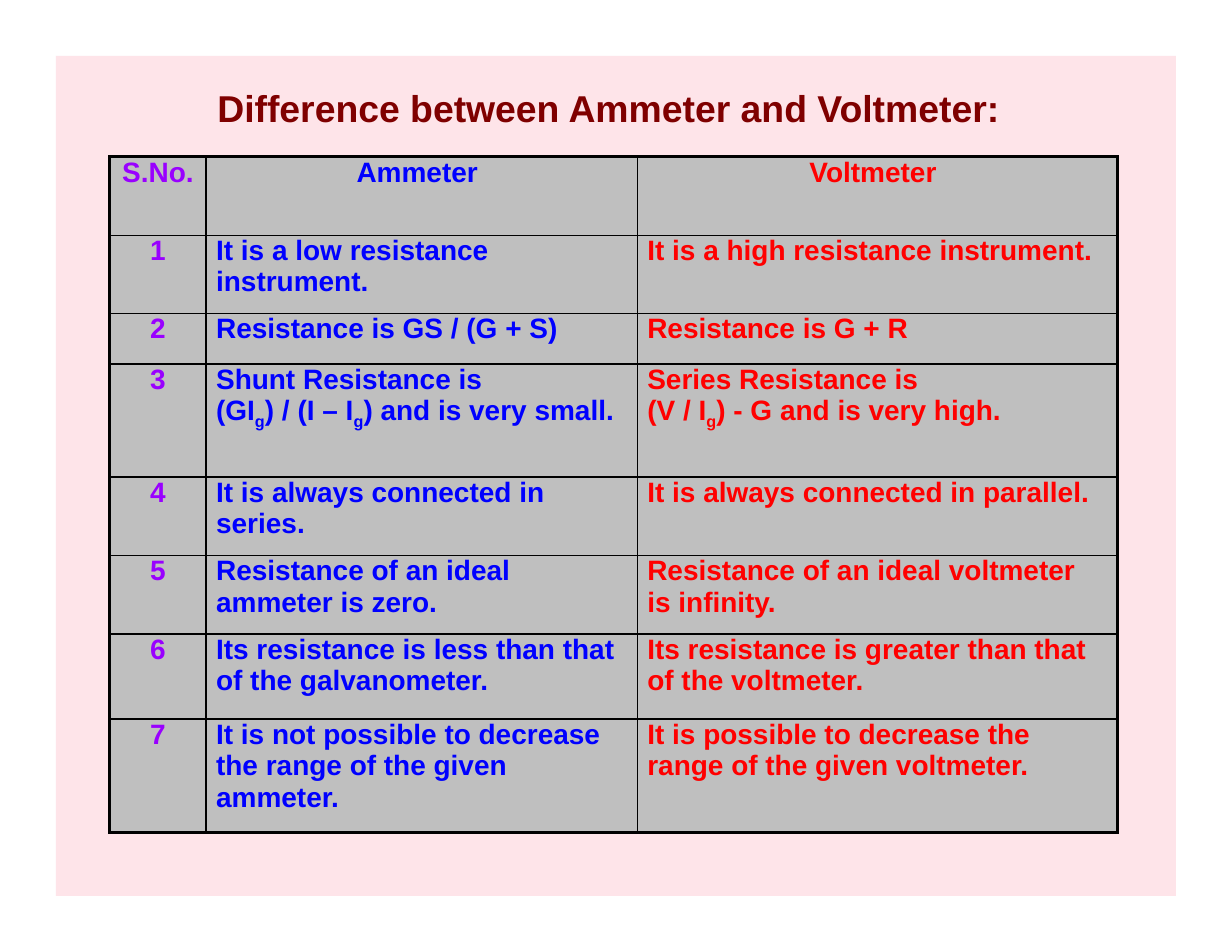
from dataclasses import dataclass

from lxml import etree
from pptx import Presentation
from pptx.dml.color import RGBColor
from pptx.enum.shapes import MSO_SHAPE
from pptx.enum.text import MSO_ANCHOR, PP_ALIGN
from pptx.oxml.ns import qn
from pptx.util import Inches, Pt

LEFT, MID = PP_ALIGN.LEFT, PP_ALIGN.CENTER
TOP = MSO_ANCHOR.TOP
RECT = MSO_SHAPE.RECTANGLE
HUES = {
    "panel": "FEE4E9", "title": "7F0000", "cell": "BFBFBF", "line": "000000",
    "num": "9900FF", "amp": "0000FF", "volt": "FF0000",
}
THIN, THICK = 1, 2.25


@dataclass
class Column:
    """A table column with its look."""
    head: str
    width: float
    hue: str
    align: int
    left: float
    right: float


@dataclass
class Row:
    """One point of difference; an underscore lowers the next letter."""
    amp: str
    volt: str
    height: float


COLS = [
    Column("S.No.", 0.86, "num", MID, 0, 0),
    Column("Ammeter", 3.85, "amp", LEFT, 0.09, 0.17),
    Column("Voltmeter", 4.29, "volt", LEFT, 0.09, 0.17),
]
HEAD = 0.7
ROWS = [
    Row("It is a low resistance instrument.",
        "It is a high resistance instrument.", 0.7),
    Row("Resistance is GS / (G + S)", "Resistance is G + R", 0.45),
    Row("Shunt Resistance is\n(GI_g) / (I – I_g) and is very small.",
        "Series Resistance is\n(V / I_g) - G and is very high.", 1.01),
    Row("It is always connected in series.",
        "It is always connected in parallel.", 0.7),
    Row("Resistance of an ideal ammeter is zero.",
        "Resistance of an ideal voltmeter is infinity.", 0.7),
    Row("Its resistance is less than that of the galvanometer.",
        "Its resistance is greater than that of the voltmeter.", 0.76),
    Row("It is not possible to decrease the range of the given ammeter.",
        "It is possible to decrease the range of the given voltmeter.", 1.01),
]


def color(key: str) -> RGBColor:
    """Look up a colour by its role."""
    return RGBColor.from_string(HUES[key])


def write(frame, text: str, *, hue: str, size: float = 18, align=LEFT) -> None:
    """Fill a text frame with bold lines, lowering marked letters."""
    for i, line in enumerate(text.split("\n")):
        para = frame.add_paragraph() if i else frame.paragraphs[0]
        para.alignment = align
        first, *rest = line.split("_")
        parts = [(first, False)]
        for part in rest:
            parts += [(part[0], True), (part[1:], False)]
        for words, low in parts:
            run = para.add_run()
            run.text = words
            run.font.name, run.font.size, run.font.bold = "Arial", Pt(size), True
            run.font.color.rgb = color(hue)
            if low:
                run.font._element.set("baseline", "-23000")


def border(cell, sides: dict[str, float]) -> None:
    """Draw the cell edges, given as side and width."""
    props = cell._tc.get_or_add_tcPr()
    for i, (side, width) in enumerate(sides.items()):
        edge = etree.Element(qn(f"a:ln{side}"), w=str(Pt(width)))
        fill = etree.SubElement(edge, qn("a:solidFill"))
        etree.SubElement(fill, qn("a:srgbClr"), val=HUES["line"])
        props.insert(i, edge)


def panel(slide) -> None:
    """Lay the pink panel behind the title."""
    shape = slide.shapes.add_shape(
        RECT, Inches(0.5), Inches(0.5), Inches(10), Inches(7.5))
    shape.shadow.inherit = False
    shape.fill.solid()
    shape.fill.fore_color.rgb = color("panel")
    shape.line.fill.background()
    slide.shapes.title.element.addprevious(shape.element)


def heading(slide, text: str) -> None:
    """Place and fill the title."""
    title = slide.shapes.title
    title.left, title.top = Inches(0.84), Inches(0.7)
    title.width, title.height = Inches(9.33), Inches(1.2)
    frame = title.text_frame
    frame.vertical_anchor = TOP
    frame.margin_left, frame.margin_top = Inches(1.1), Inches(0.06)
    frame.margin_right = frame.margin_bottom = 0
    write(frame, text, hue="title", size=24)


def grid(slide) -> None:
    """Build the comparison table."""
    texts = [[col.head for col in COLS]]
    texts += [[str(n), row.amp, row.volt] for n, row in enumerate(ROWS, 1)]
    tall = [HEAD] + [row.height for row in ROWS]
    wide = [col.width for col in COLS]
    table = slide.shapes.add_table(
        len(tall), len(wide), Inches(0.98), Inches(1.4),
        Inches(sum(wide)), Inches(sum(tall))).table
    table.first_row = table.horz_banding = False
    for c, width in enumerate(wide):
        table.columns[c].width = Inches(width)
    for r, height in enumerate(tall):
        table.rows[r].height = Inches(height)
        for c, col in enumerate(COLS):
            cell = table.cell(r, c)
            cell.margin_top = cell.margin_bottom = 0
            cell.margin_left = Inches(col.left)
            cell.margin_right = Inches(col.right)
            cell.fill.solid()
            cell.fill.fore_color.rgb = color("cell")
            write(cell.text_frame, texts[r][c], hue=col.hue,
                  align=col.align if r else MID)
            border(cell, {
                "L": THIN if c else THICK,
                "R": THICK if c == len(wide) - 1 else THIN,
                "T": THIN if r else THICK,
                "B": THICK if r == len(tall) - 1 else THIN,
            })


def main() -> None:
    """Build and save the slide."""
    deck = Presentation()
    deck.slide_width, deck.slide_height = Inches(11), Inches(8.5)
    slide = deck.slides.add_slide(deck.slide_layouts[5])
    panel(slide)
    heading(slide, "Difference between Ammeter and Voltmeter:")
    grid(slide)
    deck.save("out.pptx")


if __name__ == "__main__":
    main()
